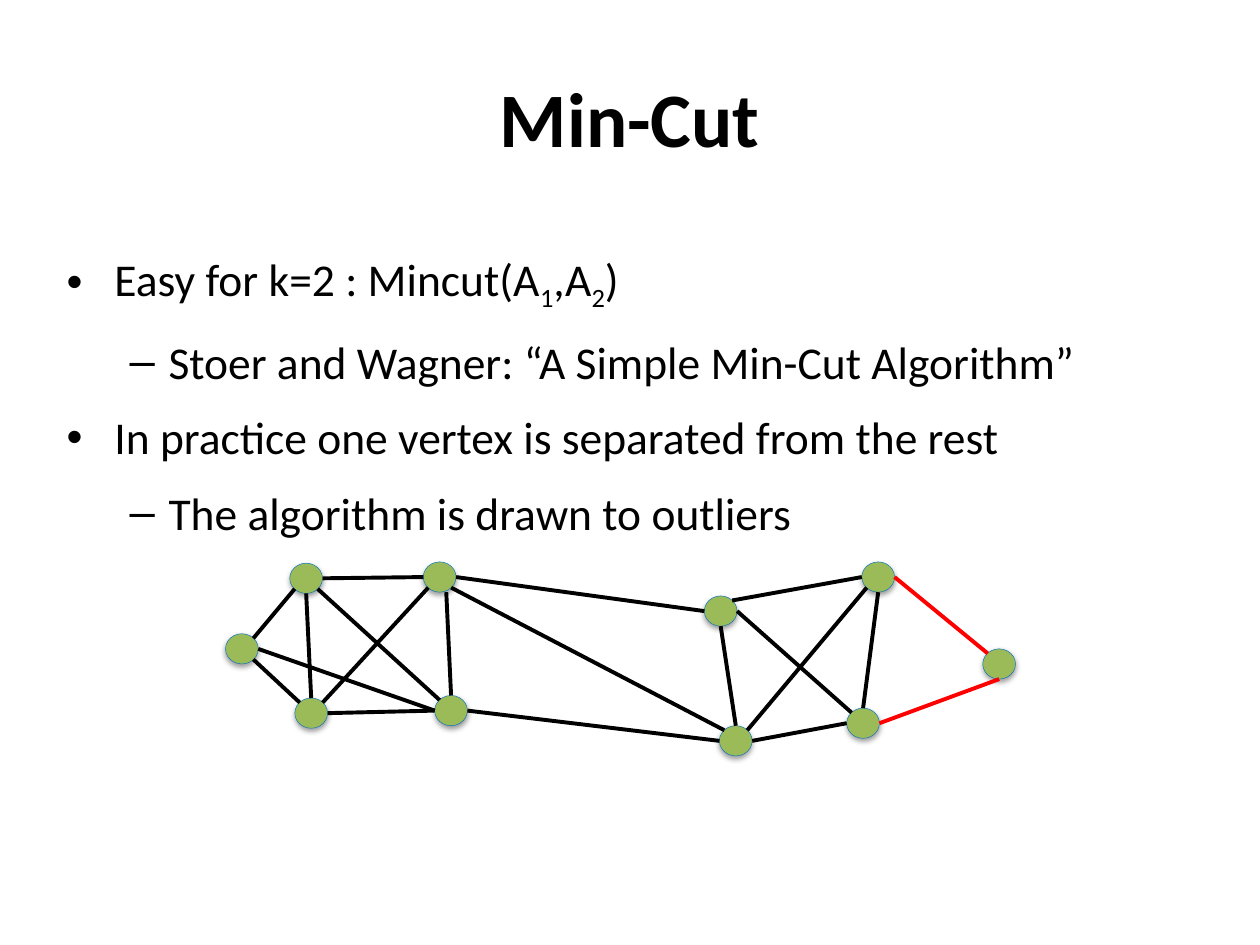
from dataclasses import dataclass

from lxml import etree
from pptx import Presentation
from pptx.dml.color import RGBColor
from pptx.enum import shapes, text
from pptx.oxml import parse_xml
from pptx.oxml.ns import nsdecls, qn
from pptx.util import Inches, Pt


@dataclass(frozen=True)
class Theme:
    font: str = "Calibri"
    title_size: int = 44
    body_size: int = 26
    ink: str = "000000"
    node: str = "9BBB59"
    outline: str = "0070C0"
    cut: str = "FF0000"


THEME = Theme()
NODE_W, NODE_H = 0.26, 0.24

# Attachment points on a node, as fractions of its width and height
SITES = {
    "N": (0.5, 0), "S": (0.5, 1), "W": (0, 0.5), "E": (1, 0.5),
    "NW": (0.15, 0.15), "NE": (0.85, 0.15),
    "SW": (0.15, 0.85), "SE": (0.85, 0.85), "SSE": (0.7, 1),
}

# Top left corner of each vertex
NODES = {
    "a": (2.3, 4.47), "b": (3.36, 4.46), "c": (1.79, 5.03),
    "d": (2.34, 5.54), "e": (3.45, 5.52), "f": (5.59, 4.73),
    "g": (5.71, 5.76), "h": (6.84, 4.46), "i": (6.72, 5.62),
    "j": (7.8, 5.15),
}

# Edges as "vertex.site vertex.site"
EDGES = [
    "a.E b.W", "c.NE a.SW", "c.SE d.NW", "a.SE e.NW", "e.W d.E",
    "e.N b.SSE", "a.S d.N", "d.NE b.SW", "c.E e.W",
    "b.E f.W", "e.E g.W", "b.SE g.NW",
    "f.E i.NW", "f.S g.N", "f.NE h.W", "g.E i.W", "i.N h.S", "h.SW g.NE",
]
CUT_EDGES = ["h.E j.NW", "i.E j.S"]

# Bullet level and (text, baseline) runs
BULLETS = [
    (0, [("Easy for k=2 : Mincut(A", 0), ("1", -25), (",A", 0),
         ("2", -25), (")", 0)]),
    (1, [("Stoer and Wagner: “A Simple Min-Cut Algorithm”", 0)]),
    (0, [("In practice one vertex is separated from the rest", 0)]),
    (1, [("The algorithm is drawn to outliers", 0)]),
]
LEVELS = [("•", 0.38, 0.38), ("–", 0.81, 0.31)]  # mark, margin, hanging


def add_text(p, words, size, color=THEME.ink, bold=False, baseline=0):
    r = p.add_run()
    r.text = words
    r.font.name = THEME.font
    r.font.size = Pt(size)
    r.font.bold = bold
    r.font.color.rgb = RGBColor.from_string(color)
    if baseline:
        r._r.get_or_add_rPr().set("baseline", str(baseline * 1000))


def site_point(ref):
    name, site = ref.split(".")
    (x, y), (fx, fy) = NODES[name], SITES[site]
    return Inches(x + fx * NODE_W), Inches(y + fy * NODE_H)


class SlideBuilder:
    def __init__(self, prs, theme):
        self.theme = theme
        self.s = prs.slides.add_slide(prs.slide_layouts[5])

    def title(self, words, x, y, w, h):
        sp = self.s.shapes.title
        sp.left, sp.top, sp.width, sp.height = map(Inches, (x, y, w, h))
        tf = sp.text_frame
        tf.vertical_anchor = text.MSO_ANCHOR.MIDDLE
        p = tf.paragraphs[0]
        p.alignment = text.PP_ALIGN.CENTER
        add_text(p, words, self.theme.title_size, bold=True)

    def bullets(self, items, x, y, w, h):
        sp = self.s.shapes.add_textbox(*map(Inches, (x, y, w, h)))
        tf = sp.text_frame
        tf.word_wrap = True
        for n, (level, runs) in enumerate(items):
            p = tf.add_paragraph() if n else tf.paragraphs[0]
            p.level = level
            p.space_before = Pt(12)
            mark, margin, hanging = LEVELS[level]
            pPr = p._p.get_or_add_pPr()
            pPr.set("marL", str(Inches(margin)))
            pPr.set("indent", str(-Inches(hanging)))
            etree.SubElement(pPr, qn("a:buFont")).set("typeface", "Arial")
            etree.SubElement(pPr, qn("a:buChar")).set("char", mark)
            for words, baseline in runs:
                add_text(p, words, self.theme.body_size, baseline=baseline)

    def node(self, x, y):
        sp = self.s.shapes.add_shape(
            shapes.MSO_SHAPE.OVAL, *map(Inches, (x, y, NODE_W, NODE_H)))
        sp.fill.solid()
        sp.fill.fore_color.rgb = RGBColor.from_string(self.theme.node)
        sp.line.color.rgb = RGBColor.from_string(self.theme.outline)
        sp.line.width = Pt(0.25)
        # Soft shadow straight below
        sp._element.spPr.append(parse_xml(
            f'<a:effectLst {nsdecls("a")}>'
            f'<a:outerShdw blurRad="{Pt(3.1)}" dist="{Pt(1.6)}" '
            'dir="5400000" rotWithShape="0"><a:srgbClr val="000000">'
            '<a:alpha val="38000"/></a:srgbClr></a:outerShdw></a:effectLst>'))

    def edge(self, ends, color):
        start, end = map(site_point, ends.split())
        cn = self.s.shapes.add_connector(
            shapes.MSO_CONNECTOR.STRAIGHT, *start, *end)
        cn.line.color.rgb = RGBColor.from_string(color)
        cn.line.width = Pt(2.25)
        etree.SubElement(cn._element.spPr, qn("a:effectLst"))


def main():
    prs = Presentation()
    prs.slide_width, prs.slide_height = Inches(10), Inches(7.5)
    b = SlideBuilder(prs, THEME)

    # Text
    b.title("Min-Cut", 0.5, 0.3, 9, 1.25)
    b.bullets(BULLETS, 0.43, 1.94, 9, 4.56)

    # Graph, with the cut edges in red
    for corner in NODES.values():
        b.node(*corner)
    for ends in EDGES:
        b.edge(ends, THEME.ink)
    for ends in CUT_EDGES:
        b.edge(ends, THEME.cut)

    prs.save("out.pptx")


if __name__ == "__main__":
    main()
